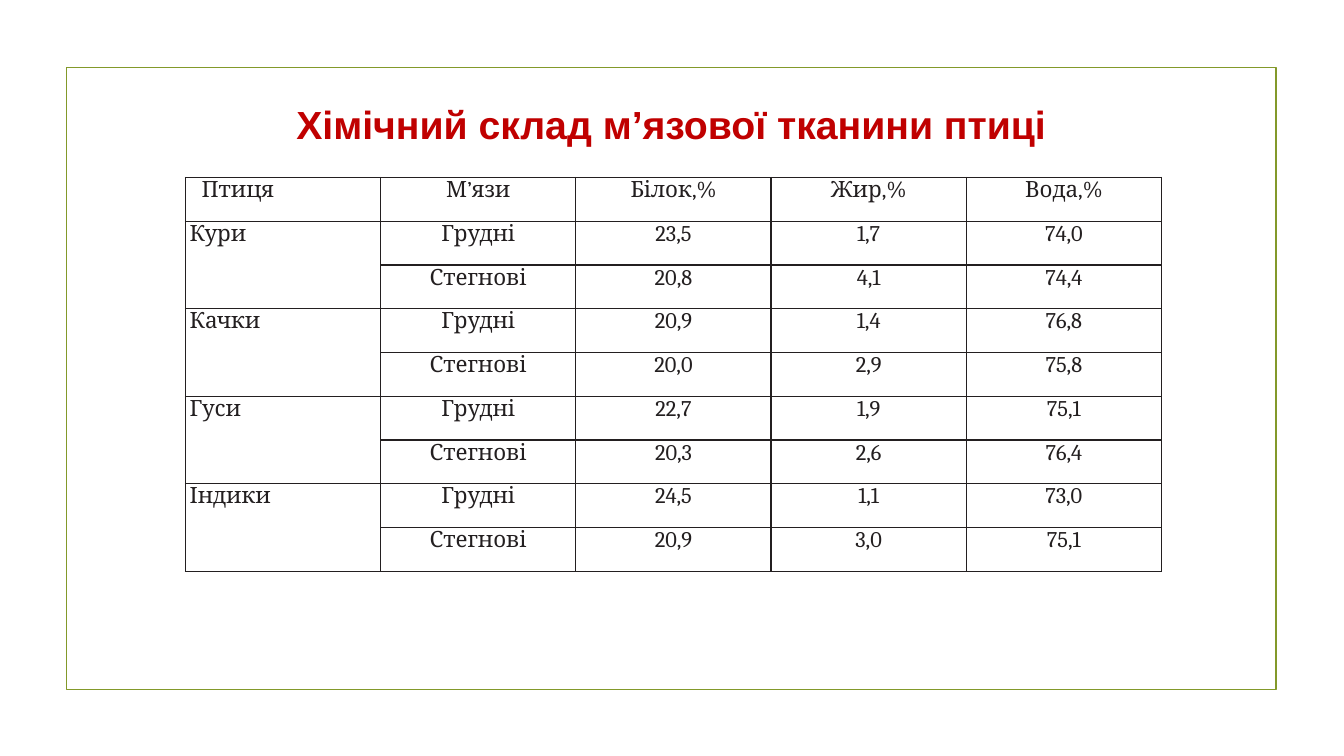
from lxml import etree
from pptx import Presentation
from pptx.dml.color import RGBColor
from pptx.enum.shapes import MSO_SHAPE
from pptx.enum.text import MSO_ANCHOR, PP_ALIGN
from pptx.oxml.ns import qn
from pptx.util import Inches, Pt

RECT = MSO_SHAPE.RECTANGLE
TOP = MSO_ANCHOR.TOP
LEFT, CENTER = PP_ALIGN.LEFT, PP_ALIGN.CENTER

OLIVE = RGBColor(0x83, 0x99, 0x2A)
RED = RGBColor(0xC0, 0x00, 0x00)
INK = RGBColor(0x23, 0x1F, 0x20)

HEAD = ["Птиця", "М’язи", "Білок,%", "Жир,%", "Вода,%"]
MUSCLES = ["Грудні", "Стегнові"]
BIRDS = {
    "Кури": [("23,5", "1,7", "74,0"), ("20,8", "4,1", "74,4")],
    "Качки": [("20,9", "1,4", "76,8"), ("20,0", "2,9", "75,8")],
    "Гуси": [("22,7", "1,9", "75,1"), ("20,3", "2,6", "76,4")],
    "Індики": [("24,5", "1,1", "73,0"), ("20,9", "3,0", "75,1")],
}


def put_text(frame, text, *, font="Cambria", size=16, color=INK,
             bold=False, align=CENTER):
    para = frame.paragraphs[0]
    para.alignment = align
    run = para.add_run()
    run.text = text
    run.font.name = font
    run.font.size = Pt(size)
    run.font.bold = bold
    run.font.color.rgb = color


def add_frame(slide):
    frame = slide.shapes.add_shape(
        RECT, Inches(0.66), Inches(0.67), Inches(12), Inches(6.17))
    frame.shadow.inherit = False
    frame.fill.background()
    frame.line.color.rgb = OLIVE
    frame.line.width = Pt(1.25)


def add_title(slide, text):
    box = slide.shapes.add_textbox(
        Inches(2.94), Inches(0.99), Inches(8), Inches(0.45))
    frame = box.text_frame
    frame.word_wrap = True
    frame.vertical_anchor = TOP
    frame.margin_left = frame.margin_right = 0
    frame.margin_top = frame.margin_bottom = 0
    put_text(frame, text, font="Arial", size=28, color=RED, bold=True,
             align=LEFT)


def style_cell(cell, left=0):
    """Clear the fill, set the margins and draw a border on all sides."""
    cell.margin_left = Inches(left)
    cell.margin_right = cell.margin_top = cell.margin_bottom = 0
    cell.vertical_anchor = TOP
    props = cell._tc.get_or_add_tcPr()
    for side in ("lnL", "lnR", "lnT", "lnB"):
        line = etree.SubElement(props, qn(f"a:{side}"), w=str(Pt(1)))
        fill = etree.SubElement(line, qn("a:solidFill"))
        etree.SubElement(fill, qn("a:srgbClr"), val=str(INK))
    cell.fill.background()


def add_grid(slide):
    rows = [HEAD]
    for bird, values in BIRDS.items():
        for muscle, row in zip(MUSCLES, values):
            name = bird if muscle == MUSCLES[0] else ""
            rows.append([name, muscle, *row])
    grid = slide.shapes.add_table(
        len(rows), len(HEAD), Inches(1.84), Inches(1.76),
        Inches(9.68), Inches(3.91)).table
    grid.first_row = grid.horz_banding = False
    for r, row in enumerate(rows):
        for c, text in enumerate(row):
            cell = grid.cell(r, c)
            indent = 0 if c else 0.04 if r else 0.16
            style_cell(cell, indent)
            if text:
                put_text(cell.text_frame, text, align=CENTER if c else LEFT)
    for r in range(1, len(rows), len(MUSCLES)):
        grid.cell(r, 0).merge(grid.cell(r + len(MUSCLES) - 1, 0))


def main():
    deck = Presentation()
    deck.slide_width = Inches(13.33)
    deck.slide_height = Inches(7.5)
    slide = deck.slides.add_slide(deck.slide_layouts[6])
    add_frame(slide)
    add_grid(slide)
    add_title(slide, "Хімічний склад м’язової тканини птиці")
    deck.save("out.pptx")


if __name__ == "__main__":
    main()
